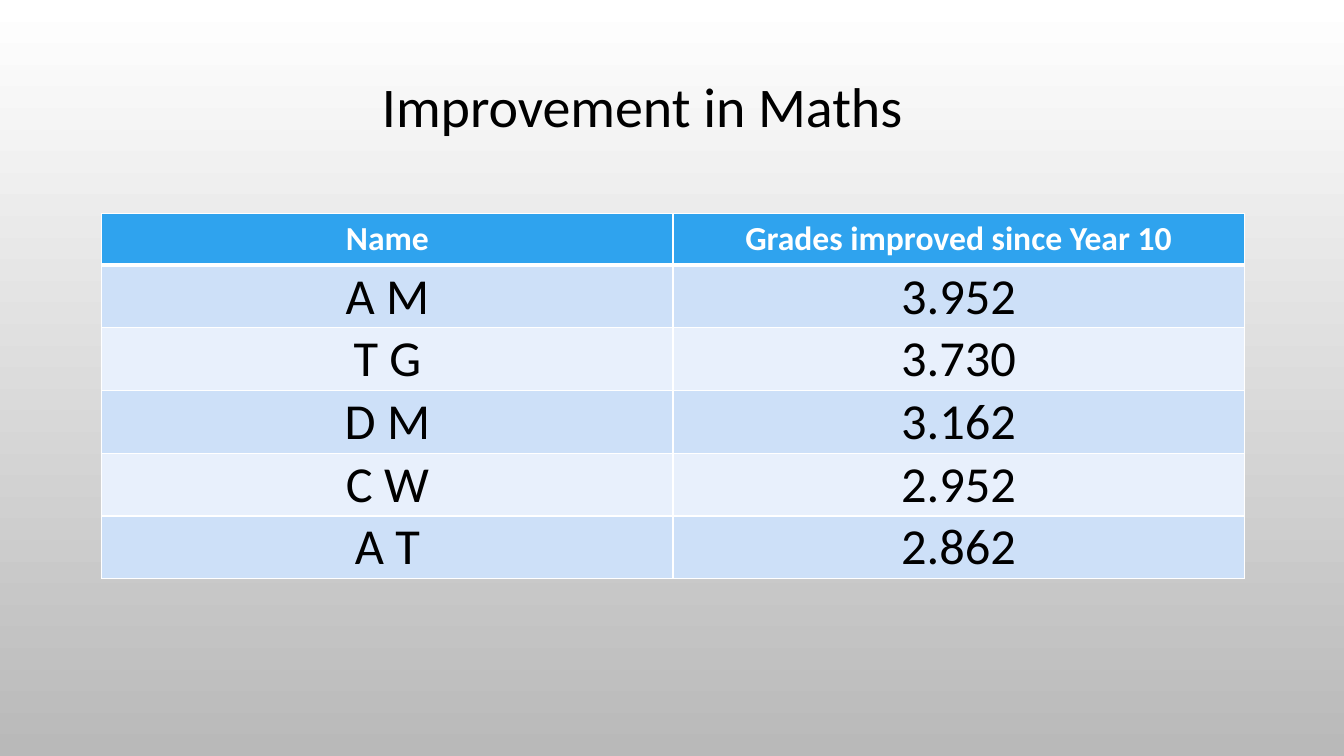
from lxml import etree
from pptx import Presentation
from pptx.dml.color import RGBColor
from pptx.enum.text import MSO_ANCHOR, PP_ALIGN
from pptx.oxml.ns import qn
from pptx.util import Inches, Pt

CENTER = PP_ALIGN.CENTER
TOP, BOTTOM = MSO_ANCHOR.TOP, MSO_ANCHOR.BOTTOM

# Content
TITLE = "Improvement in Maths"
GRADES = [
    ("Name", "Grades improved since Year 10"),
    ("A M", "3.952"),
    ("T G", "3.730"),
    ("D M", "3.162"),
    ("C W", "2.952"),
    ("A T", "2.862"),
]

# Style
FONT = "Calibri"
COLORS = {
    "bg_top": "FFFFFF", "bg_bottom": "B9B9B9", "header": "2FA3EE",
    "odd": "CDE0F8", "even": "E8F0FC", "border": "FFFFFF",
    "light": "FFFFFF", "dark": "000000",
}
TITLE_FONT = {"size": Pt(40), "name": FONT, "bold": False}
HEADER_FONT = {"size": Pt(24), "name": FONT, "bold": True}
BODY_FONT = {"size": Pt(36), "name": FONT, "bold": False}
BODY_CELL = {
    "vertical_anchor": BOTTOM, "margin_left": Inches(0.01),
    "margin_right": Inches(0.01), "margin_top": Inches(0.01), "margin_bottom": 0,
}
HEADER_CELL = {"vertical_anchor": TOP}
TABLE_LEFT, TABLE_TOP, TABLE_WIDTH = 1.01, 2.12, 11.33
HEADER_HEIGHT, BODY_HEIGHT = 0.51, 0.62


def rgb(name):
    return RGBColor.from_string(COLORS[name])


def set_attrs(obj, values):
    for name, value in values.items():
        setattr(obj, name, value)


def write(tf, text, font, color):
    p = tf.paragraphs[0]
    p.alignment = CENTER
    r = p.add_run()
    r.text = text
    set_attrs(r.font, font)
    r.font.color.rgb = rgb(color)


def add_borders(cell, bottom):
    tc_pr = cell._tc.get_or_add_tcPr()
    widths = {"lnL": 1, "lnR": 1, "lnT": 1, "lnB": bottom}
    for i, (tag, width) in enumerate(widths.items()):
        ln = etree.Element(qn("a:" + tag), w=str(Pt(width)))
        fill = etree.SubElement(ln, qn("a:solidFill"))
        etree.SubElement(fill, qn("a:srgbClr"), val=COLORS["border"])
        tc_pr.insert(i, ln)


prs = Presentation()
prs.slide_width, prs.slide_height = Inches(13.33), Inches(7.5)
s = prs.slides.add_slide(prs.slide_layouts[6])

# Background, shaded from top to bottom
bg = s.background.fill
bg.gradient()
bg.gradient_angle = 270
for stop, position, name in zip(bg.gradient_stops, (0, 1), ("bg_top", "bg_bottom")):
    stop.position = position
    stop.color.rgb = rgb(name)

# Table of grades
heights = [HEADER_HEIGHT] + [BODY_HEIGHT] * (len(GRADES) - 1)
columns = len(GRADES[0])
table = s.shapes.add_table(
    len(GRADES), columns, Inches(TABLE_LEFT), Inches(TABLE_TOP),
    Inches(TABLE_WIDTH), Inches(sum(heights))).table
for column in table.columns:
    column.width = Inches(TABLE_WIDTH / columns)
for i, (values, height) in enumerate(zip(GRADES, heights)):
    table.rows[i].height = Inches(height)
    header = i == 0
    fill = "header" if header else ("odd" if i % 2 else "even")
    for j, text in enumerate(values):
        cell = table.cell(i, j)
        set_attrs(cell, HEADER_CELL if header else BODY_CELL)
        cell.fill.solid()
        cell.fill.fore_color.rgb = rgb(fill)
        add_borders(cell, 3 if header else 1)
        write(cell.text_frame, text, HEADER_FONT if header else BODY_FONT,
              "light" if header else "dark")

# Title
tf = s.shapes.add_textbox(Inches(2.04), Inches(0.66), Inches(8.66), Inches(0.77)).text_frame
tf.word_wrap = True
write(tf, TITLE, TITLE_FONT, "dark")

prs.save("out.pptx")
